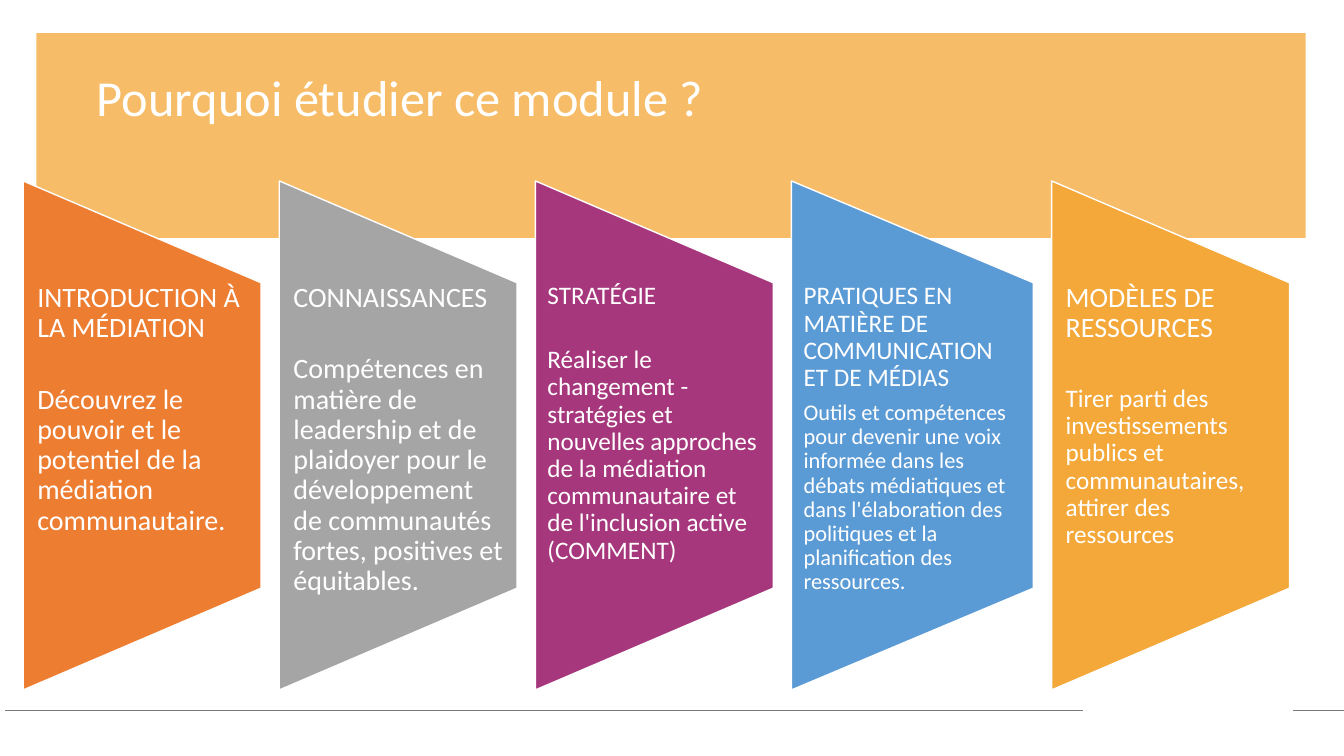
"""Build the slide that presents the five reasons to study the module."""
from lxml import etree
from pptx import Presentation
from pptx.dml.color import RGBColor
from pptx.enum.shapes import MSO_CONNECTOR, MSO_SHAPE
from pptx.enum.text import MSO_ANCHOR, MSO_AUTO_SIZE, PP_ALIGN
from pptx.oxml.ns import qn
from pptx.util import Inches, Pt

TITLE = "Pourquoi étudier ce module ?"
FONT = "Calibri"
WHITE, BAND, RULE = "FFFFFF", "F6BC67", "797979"

# heading, body, fill, width, inset, heading size, body size, gap below heading
PANELS = [
    ("INTRODUCTION À LA MÉDIATION",
     "Découvrez le pouvoir et le potentiel de la médiation communautaire.",
     "ED7D31", 2.36, 0.14, 20, 20, 29.5),
    ("CONNAISSANCES",
     "Compétences en matière de leadership et de plaidoyer pour le développement "
     "de communautés fortes, positives et équitables.",
     "A5A5A5", 2.36, 0.14, 20, 20, 29.5),
    ("STRATÉGIE",
     "Réaliser le changement - stratégies et nouvelles approches de la médiation "
     "communautaire et de l'inclusion active (COMMENT)",
     "A6377D", 2.36, 0.12, 18, 18, 26),
    ("PRATIQUES EN MATIÈRE DE COMMUNICATION ET DE MÉDIAS",
     "Outils et compétences pour devenir une voix informée dans les débats "
     "médiatiques et dans l'élaboration des politiques et la planification des "
     "ressources.",
     "5B9BD5", 2.4, 0.12, 18, 16, 6.5),
    ("MODÈLES DE RESSOURCES",
     "Tirer parti des investissements publics et communautaires, attirer des "
     "ressources",
     "F3A839", 2.36, 0.14, 20, 18, 30),
]
PANEL_LEFT, PANEL_GAP = 0.23, 0.18
PANEL_MIDDLE, PANEL_HEIGHT = 4.32, 5.05
TEXT_TOP, TEXT_HEIGHT = 2.81, 3.03
RULE_Y, RULES = 7.05, [(0.05, 10.74), (12.82, 13.33)]


def rgb(value):
    return RGBColor.from_string(value)


def write(p, text, size):
    p.text = text
    p.alignment = PP_ALIGN.LEFT
    p.line_spacing = 0.9
    p.space_before = Pt(0)
    for r in p.runs:
        r.font.name, r.font.size = FONT, Pt(size)
        r.font.color.rgb = rgb(WHITE)


def add_filled(s, kind, box, fill):
    sp = s.shapes.add_shape(kind, *map(Inches, box))
    sp.shadow.inherit = False
    sp.fill.solid()
    sp.fill.fore_color.rgb = rgb(fill)
    return sp


def add_title(s):
    title = s.shapes.title
    title.left, title.top = Inches(0.86), Inches(0.67)
    title.width, title.height = Inches(11.55), Inches(0.76)
    tf = title.text_frame
    tf.auto_size = MSO_AUTO_SIZE.NONE
    tf.vertical_anchor = MSO_ANCHOR.TOP
    write(tf.paragraphs[0], TITLE, 36)
    band = add_filled(s, MSO_SHAPE.RECTANGLE, (0.36, 0.33, 12.59, 2.03), BAND)
    band.line.fill.background()
    title.element.addprevious(band.element)


def add_rule(s, start, end):
    y = Inches(RULE_Y)
    line = s.shapes.add_connector(
        MSO_CONNECTOR.STRAIGHT, Inches(start), y, Inches(end), y)
    line.line.color.rgb = rgb(RULE)
    line.line.width = Pt(0.5)
    etree.SubElement(line.element.spPr, qn("a:effectLst"))


def add_panel(s, left, panel):
    heading, body, fill, width, inset, heading_size, body_size, gap = panel
    box = (left + (width - PANEL_HEIGHT) / 2, PANEL_MIDDLE - width / 2,
           PANEL_HEIGHT, width)
    sp = add_filled(s, MSO_SHAPE.FLOWCHART_MANUAL_OPERATION, box, fill)
    sp.rotation = 270
    sp.line.color.rgb = rgb(WHITE)
    sp.line.width = Pt(1)

    tf = s.shapes.add_textbox(
        *map(Inches, (left, TEXT_TOP, width, TEXT_HEIGHT))).text_frame
    tf.word_wrap = True
    tf.margin_left = tf.margin_right = Inches(inset)
    tf.margin_top = tf.margin_bottom = 0
    write(tf.paragraphs[0], heading, heading_size)
    tf.paragraphs[0].space_after = Pt(gap)
    write(tf.add_paragraph(), body, body_size)


def main():
    prs = Presentation()
    prs.slide_width, prs.slide_height = Inches(13.33), Inches(7.5)
    s = prs.slides.add_slide(prs.slide_layouts[5])
    add_title(s)
    for start, end in RULES:
        add_rule(s, start, end)
    left = PANEL_LEFT
    for panel in PANELS:
        add_panel(s, left, panel)
        left += panel[3] + PANEL_GAP
    prs.save("out.pptx")


if __name__ == "__main__":
    main()
